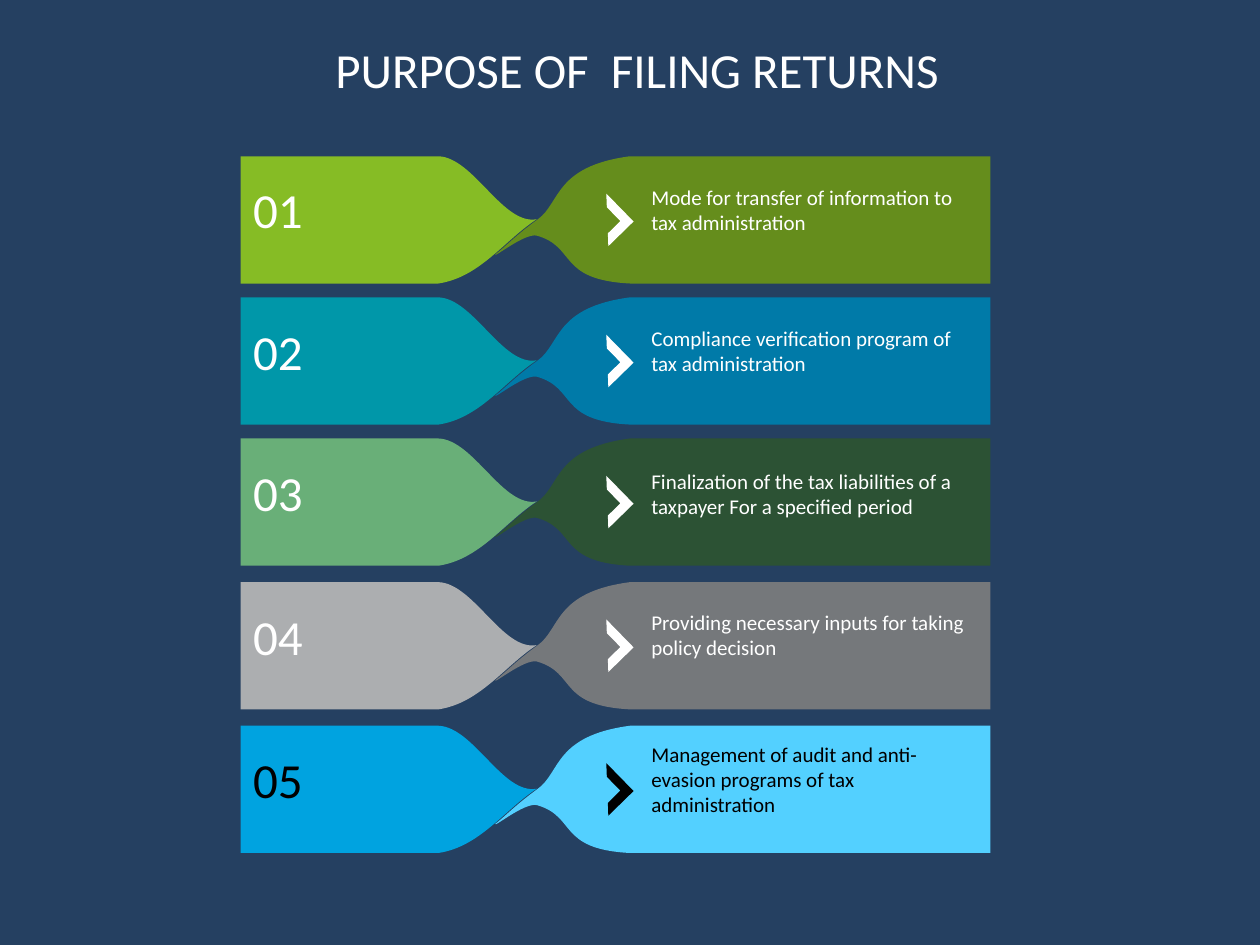
from pptx import Presentation
from pptx.dml.color import RGBColor
from pptx.enum.shapes import MSO_SHAPE
from pptx.enum.text import MSO_ANCHOR, PP_ALIGN
from pptx.oxml.ns import qn
from pptx.util import Inches, Pt

HUES = {
    "back": "254061", "white": "FFFFFF", "black": "000000",
    "lime": "86BC25", "olive": "658D1C",
    "teal": "0097A9", "blue": "007AA8",
    "mint": "69AF78", "pine": "2C5234",
    "silver": "ACAEB0", "gray": "75787B",
    "azure": "00A3E0", "sky": "53D0FF",
}
LEFT = [
    (1.91, 0), (3.48, 0),
    (3.76, 0.01, 3.99, 0.55, 4.26, 0.5),
    (4, 0.67, 3.81, 0.96, 3.48, 1.01),
    (1.91, 1.01), (1.91, 0),
]
RIGHT = [
    (7.86, 0), (5, 0),
    (4.4, 0.08, 4.45, 0.37, 4.27, 0.5),
    (4.09, 0.63, 4.01, 0.72, 3.93, 0.78),
    (3.92, 0.81, 4.16, 0.61, 4.26, 0.63),
    (4.58, 0.72, 4.42, 0.98, 5, 1.01),
    (7.86, 1.01), (7.86, 0),
]
ROWS = [
    (1.24, 1.31, 1.29, "lime", "olive", "white",
     "Mode for transfer of information to tax administration"),
    (2.36, 2.44, 2.41, "teal", "blue", "white",
     "Compliance verification program of tax administration"),
    (3.48, 3.56, 3.54, "mint", "pine", "white",
     "Finalization of the tax liabilities of a taxpayer For a specified period"),
    (4.62, 4.7, 4.66, "silver", "gray", "white",
     "Providing necessary inputs for taking policy decision"),
    (5.76, 5.84, 5.81, "azure", "sky", "black",
     "Management of audit and anti-evasion programs of tax administration"),
]


class Deck:
    font = "Calibri"

    def __init__(self, prs):
        self.slide = prs.slides.add_slide(prs.slide_layouts[6])
        self.paint(self.slide.background.fill, "back")
        self.shapes = self.slide.shapes

    def paint(self, fill, hue):
        fill.solid()
        fill.fore_color.rgb = RGBColor.from_string(HUES[hue])

    def style(self, shape, hue):
        self.paint(shape.fill, hue)
        shape.line.fill.background()
        shape.shadow.inherit = False

    def group(self):
        self.shapes = self.slide.shapes.add_group_shape().shapes

    def text(self, words, x, y, w, h, size, hue, anchor=MSO_ANCHOR.MIDDLE):
        box = self.shapes.add_textbox(Inches(x), Inches(y), Inches(w), Inches(h))
        frame = box.text_frame
        frame.word_wrap = True
        frame.vertical_anchor = anchor
        frame.margin_left = frame.margin_right = 0
        frame.margin_top = frame.margin_bottom = 0
        para = frame.paragraphs[0]
        para.text = words
        para.font.name = self.font
        para.font.size = Pt(size)
        para.font.color.rgb = RGBColor.from_string(HUES[hue])
        return para

    def ribbon(self, steps, top, hue):
        ends = [(Inches(s[-2]), Inches(top + s[-1])) for s in steps]
        pen = self.shapes.build_freeform(*ends[0])
        pen.add_line_segments(ends[1:], close=True)
        shape = pen.convert_to_shape()
        lines = shape.element.findall(".//" + qn("a:lnTo"))
        for line, step in zip(lines, steps[1:]):
            if len(step) == 6:
                line.tag = qn("a:cubicBezTo")
                for i in (0, 1):
                    x, y = step[2 * i:2 * i + 2]
                    line.insert(i, line.makeelement(qn("a:pt"), {
                        "x": str(Inches(x) - shape.left),
                        "y": str(Inches(top + y) - shape.top)}))
        self.style(shape, hue)

    def arrow(self, x, y, hue):
        shape = self.shapes.add_shape(
            MSO_SHAPE.HALF_FRAME, Inches(x), Inches(y), Inches(0.28), Inches(0.31))
        shape.adjustments[0] = 0.27
        shape.adjustments[1] = 0.26
        shape.rotation = 135.7
        self.style(shape, hue)


def main():
    prs = Presentation()
    prs.slide_width, prs.slide_height = Inches(10), Inches(7.5)
    deck = Deck(prs)
    for num, (top, mark, note, light, dark, ink, words) in enumerate(ROWS, 1):
        deck.group()
        deck.ribbon(LEFT, top, light)
        deck.ribbon(RIGHT, top, dark)
        deck.text(f"{num:02}", 2.01, mark, 0.74, 0.69, 28, ink)
        deck.arrow(4.68, top + 0.35, ink)
        deck.text(words, 5.17, note, 2.56, 0.75, 12, ink)
    deck.shapes = deck.slide.shapes
    title = deck.text("PURPOSE OF  FILING RETURNS", 0.47, 0.31, 9.17, 0.54, 28,
                      "white", MSO_ANCHOR.TOP)
    title.alignment = PP_ALIGN.CENTER
    prs.save("out.pptx")


if __name__ == "__main__":
    main()
